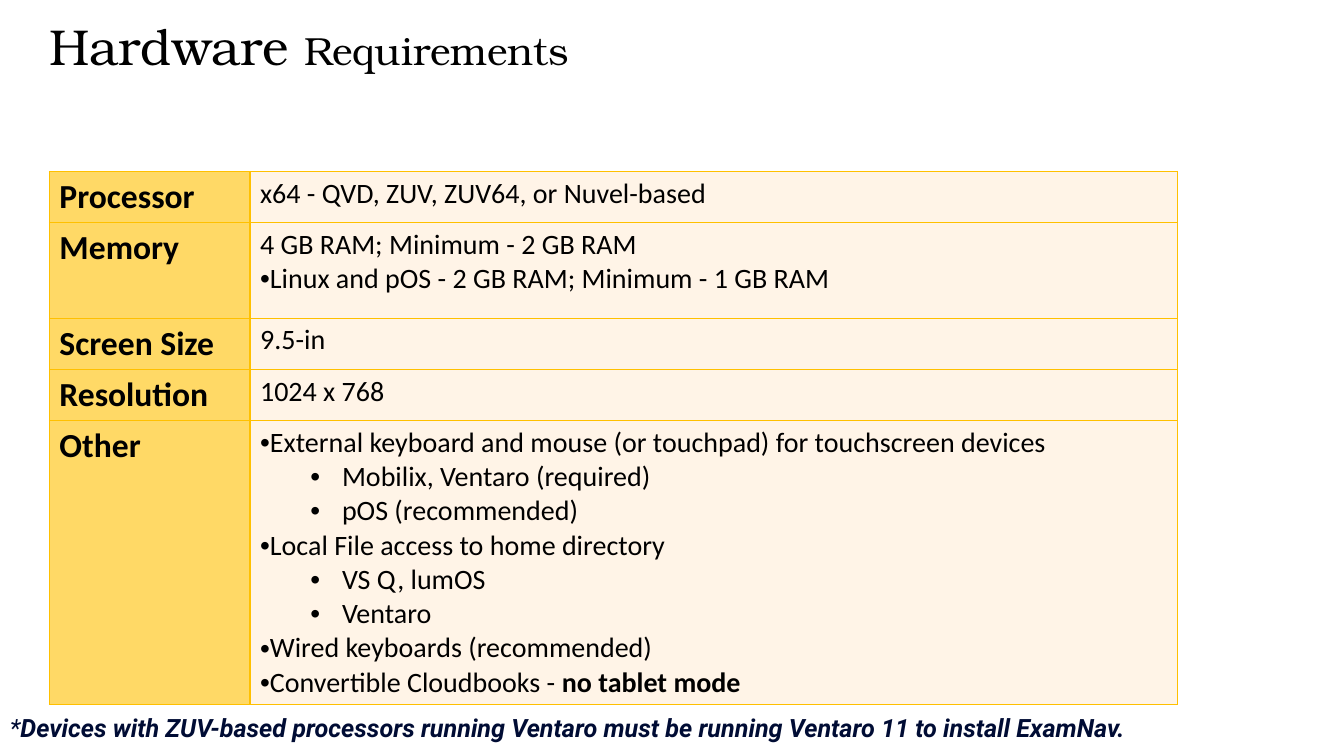
"""Build the hardware requirements slide."""
from dataclasses import dataclass

from lxml import etree
from pptx import Presentation
from pptx.dml.color import RGBColor
from pptx.enum.text import MSO_AUTO_SIZE
from pptx.oxml.ns import qn
from pptx.util import Pt

FIT_SHAPE = MSO_AUTO_SIZE.SHAPE_TO_FIT_TEXT
NO_FIT = MSO_AUTO_SIZE.NONE
BLACK = "000000"
NAVY = "000C34"
GOLD = "FFC000"
LABEL_FILL = "FFD966"
DETAIL_FILL = "FFF4E7"
COLUMN_WIDTHS = (143.3, 662.4)


@dataclass(frozen=True)
class Line:
    text: str
    bullet: bool = True
    level: int = 0
    bold_end: str = ""


@dataclass(frozen=True)
class Requirement:
    label: str
    height: float
    lines: tuple[Line, ...]


REQUIREMENTS = (
    Requirement("Processor", 27.4, (Line("x64 - QVD, ZUV, ZUV64, or Nuvel-based", False),)),
    Requirement("Memory", 68.4, (
        Line("4 GB RAM; Minimum - 2 GB RAM", False),
        Line("Linux and pOS - 2 GB RAM; Minimum - 1 GB RAM"),
    )),
    Requirement("Screen Size", 27.4, (Line("9.5-in", False),)),
    Requirement("Resolution", 27.4, (Line("1024 x 768", False),)),
    Requirement("Other", 191.5, (
        Line("External keyboard and mouse (or touchpad) for touchscreen devices"),
        Line("Mobilix, Ventaro (required)", level=1),
        Line("pOS (recommended)", level=1),
        Line("Local File access to home directory"),
        Line("VS Q, lumOS", level=1),
        Line("Ventaro", level=1),
        Line("Wired keyboards (recommended)"),
        Line("Convertible Cloudbooks - ", bold_end="no tablet mode"),
    )),
)


def color(value: str) -> RGBColor:
    """Turn a hex string into a colour."""
    return RGBColor.from_string(value)


def style_paragraph(paragraph, name: str, hex_color: str, size: float | None = None,
                    bold: bool | None = None) -> None:
    """Set the font shared by all runs of a paragraph."""
    font = paragraph.font
    font.name = name
    font.color.rgb = color(hex_color)
    font.bold = bold
    if size:
        font.size = Pt(size)


def add_bullet(paragraph, level: int) -> None:
    """Give a paragraph a round bullet and the indent of its level."""
    properties = paragraph._p.get_or_add_pPr()
    properties.set("marL", str(Pt(58.5 * level)))
    properties.set("indent", str(Pt(-22.5 * level)))
    etree.SubElement(properties, qn("a:buFont")).set("typeface", "Arial")
    etree.SubElement(properties, qn("a:buChar")).set("char", "•")
    paragraph.level = level


def style_cell(cell, fill: str) -> None:
    """Draw gold borders around a cell and fill it."""
    properties = cell._tc.get_or_add_tcPr()
    for side in ("a:lnL", "a:lnR", "a:lnT", "a:lnB"):
        border = etree.SubElement(properties, qn(side), w=str(Pt(1)))
        solid = etree.SubElement(border, qn("a:solidFill"))
        etree.SubElement(solid, qn("a:srgbClr"), val=GOLD)
    cell.fill.solid()
    cell.fill.fore_color.rgb = color(fill)


def write_details(cell, lines: tuple[Line, ...]) -> None:
    """Write the requirement lines into a cell."""
    frame = cell.text_frame
    for index, line in enumerate(lines):
        paragraph = frame.add_paragraph() if index else frame.paragraphs[0]
        if line.bullet:
            add_bullet(paragraph, line.level)
        style_paragraph(paragraph, "Calibri", BLACK, 20, False)
        paragraph.add_run().text = line.text
        if line.bold_end:
            ending = paragraph.add_run()
            ending.text = line.bold_end
            ending.font.bold = True


def add_requirements_table(slide) -> None:
    """Add the table of requirements."""
    height = sum(requirement.height for requirement in REQUIREMENTS)
    table = slide.shapes.add_table(len(REQUIREMENTS), len(COLUMN_WIDTHS), Pt(35.3), Pt(122.4),
                                   Pt(sum(COLUMN_WIDTHS)), Pt(height)).table
    table.first_row = False
    table.horz_banding = False
    for column, width in zip(table.columns, COLUMN_WIDTHS):
        column.width = Pt(width)
    for index, requirement in enumerate(REQUIREMENTS):
        table.rows[index].height = Pt(requirement.height)
        label, details = table.cell(index, 0), table.cell(index, 1)
        style_cell(label, LABEL_FILL)
        style_cell(details, DETAIL_FILL)
        paragraph = label.text_frame.paragraphs[0]
        style_paragraph(paragraph, "Calibri", BLACK, 24, True)
        paragraph.add_run().text = requirement.label
        write_details(details, requirement.lines)


def add_title(slide) -> None:
    """Add the heading in two sizes."""
    frame = slide.shapes.add_textbox(Pt(35.3), Pt(15.8), Pt(635), Pt(70.6)).text_frame
    frame.word_wrap = True
    frame.auto_size = NO_FIT
    frame.margin_left = frame.margin_top = frame.margin_right = frame.margin_bottom = Pt(0)
    paragraph = frame.paragraphs[0]
    paragraph.line_spacing = 0.9
    style_paragraph(paragraph, "TeX Gyre Bonum", BLACK)
    for text, size in (("Hardware ", 36), ("Requirements", 28)):
        run = paragraph.add_run()
        run.text = text
        run.font.size = Pt(size)


def add_footnote(slide) -> None:
    """Add the note below the table."""
    frame = slide.shapes.add_textbox(Pt(0), Pt(505.4), Pt(846.7), Pt(28.8)).text_frame
    frame.word_wrap = False
    frame.auto_size = FIT_SHAPE
    paragraph = frame.paragraphs[0]
    style_paragraph(paragraph, "Roboto", NAVY, 18)
    paragraph.font.italic = True
    paragraph.add_run().text = "*"
    note = paragraph.add_run()
    note.text = ("Devices with ZUV-based processors running Ventaro must be running "
                 "Ventaro 11 to install ExamNav.")
    note.font.bold = True


def main() -> None:
    """Create and save the presentation."""
    presentation = Presentation()
    presentation.slide_width = Pt(960)
    presentation.slide_height = Pt(540)
    slide = presentation.slides.add_slide(presentation.slide_layouts[6])
    add_title(slide)
    add_requirements_table(slide)
    add_footnote(slide)
    presentation.save("out.pptx")


if __name__ == "__main__":
    main()
